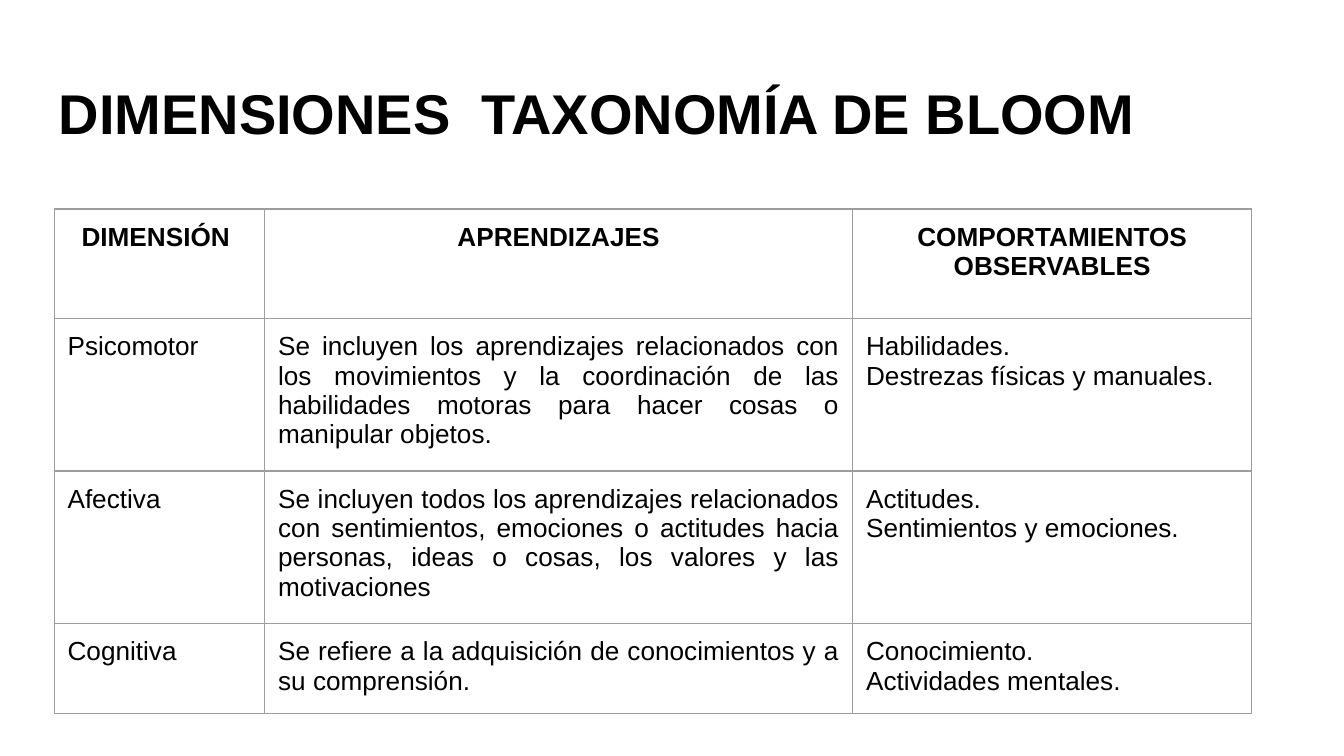
"""Build the slide on the dimensions of Bloom's taxonomy."""
import lxml.etree
import pptx
import pptx.dml.color
import pptx.enum.text
import pptx.oxml.ns
import pptx.util
from dataclasses import dataclass

Pt = pptx.util.Pt
ALIGN = pptx.enum.text.PP_ALIGN


@dataclass(frozen=True)
class Theme:
    font: str = "Arial"
    ink: str = "000000"
    rule: str = "9E9E9E"
    rule_width: float = 0.75
    title_size: float = 30
    body_size: float = 14
    inset: float = 7.2


class SlideBuilder:
    def __init__(self, theme, slide):
        self.theme = theme
        self.slide = slide

    def set_text(self, frame, text, size, bold, align):
        frame.text = text
        face = {"name": self.theme.font, "size": Pt(size), "bold": bold}
        for paragraph in frame.paragraphs:
            paragraph.alignment = align
            for run in paragraph.runs:
                for attribute, value in face.items():
                    setattr(run.font, attribute, value)
                run.font.color.rgb = pptx.dml.color.RGBColor.from_string(self.theme.ink)

    def margins(self, holder):
        for side in ("left", "top", "right", "bottom"):
            setattr(holder, f"margin_{side}", Pt(self.theme.inset))

    def title(self, text, left, top, width, height):
        heading = self.slide.shapes.add_textbox(Pt(left), Pt(top), Pt(width), Pt(height))
        frame = heading.text_frame
        frame.word_wrap = True
        self.margins(frame)
        self.set_text(frame, text, self.theme.title_size, True, ALIGN.LEFT)

    def border(self, cell):
        properties = cell._tc.get_or_add_tcPr()
        qn = pptx.oxml.ns.qn
        for position, side in enumerate(("lnL", "lnR", "lnT", "lnB")):
            line = lxml.etree.Element(qn(f"a:{side}"), w=str(Pt(self.theme.rule_width)))
            fill = lxml.etree.SubElement(line, qn("a:solidFill"))
            lxml.etree.SubElement(fill, qn("a:srgbClr"), val=self.theme.rule)
            properties.insert(position, line)

    def table(self, rows, left, top, widths, heights, aligns):
        grid = self.slide.shapes.add_table(
            len(rows), len(widths), Pt(left), Pt(top), Pt(sum(widths)), Pt(sum(heights))
        ).table
        for attribute, value in {"first_row": False, "horz_banding": False}.items():
            setattr(grid, attribute, value)
        for column, width in zip(grid.columns, widths):
            column.width = Pt(width)
        for index, (texts, height) in enumerate(zip(rows, heights)):
            grid.rows[index].height = Pt(height)
            header = index == 0
            for column, (text, align) in enumerate(zip(texts, aligns)):
                cell = grid.cell(index, column)
                cell.fill.background()
                self.margins(cell)
                self.set_text(cell.text_frame, text, self.theme.body_size, header,
                              ALIGN.CENTER if header else align)
                self.border(cell)


DIMENSIONS = [
    ("DIMENSIÓN ", "APRENDIZAJES", "COMPORTAMIENTOS OBSERVABLES"),
    ("Psicomotor",
     "Se incluyen los aprendizajes relacionados con los movimientos y la coordinación "
     "de las habilidades motoras para hacer cosas o manipular objetos.",
     "Habilidades.\nDestrezas físicas y manuales."),
    ("Afectiva",
     "Se incluyen todos los aprendizajes relacionados con sentimientos, emociones o "
     "actitudes hacia personas, ideas o cosas, los valores y las motivaciones",
     "Actitudes.\nSentimientos y emociones."),
    ("Cognitiva",
     "Se refiere a la adquisición de conocimientos y a su comprensión.",
     "Conocimiento.\nActividades mentales."),
]


def main():
    deck = pptx.Presentation()
    deck.slide_width, deck.slide_height = Pt(720), Pt(405)
    builder = SlideBuilder(Theme(), deck.slides.add_slide(deck.slide_layouts[6]))
    builder.title("DIMENSIONES  TAXONOMÍA DE BLOOM", 24.5, 35, 671, 49)
    builder.table(
        DIMENSIONS, 29, 112,
        widths=(112.8, 315, 213.8),
        heights=(58.7, 78.9, 77.1, 46),
        aligns=(ALIGN.LEFT, ALIGN.JUSTIFY, ALIGN.LEFT),
    )
    deck.save("out.pptx")


if __name__ == "__main__":
    main()
